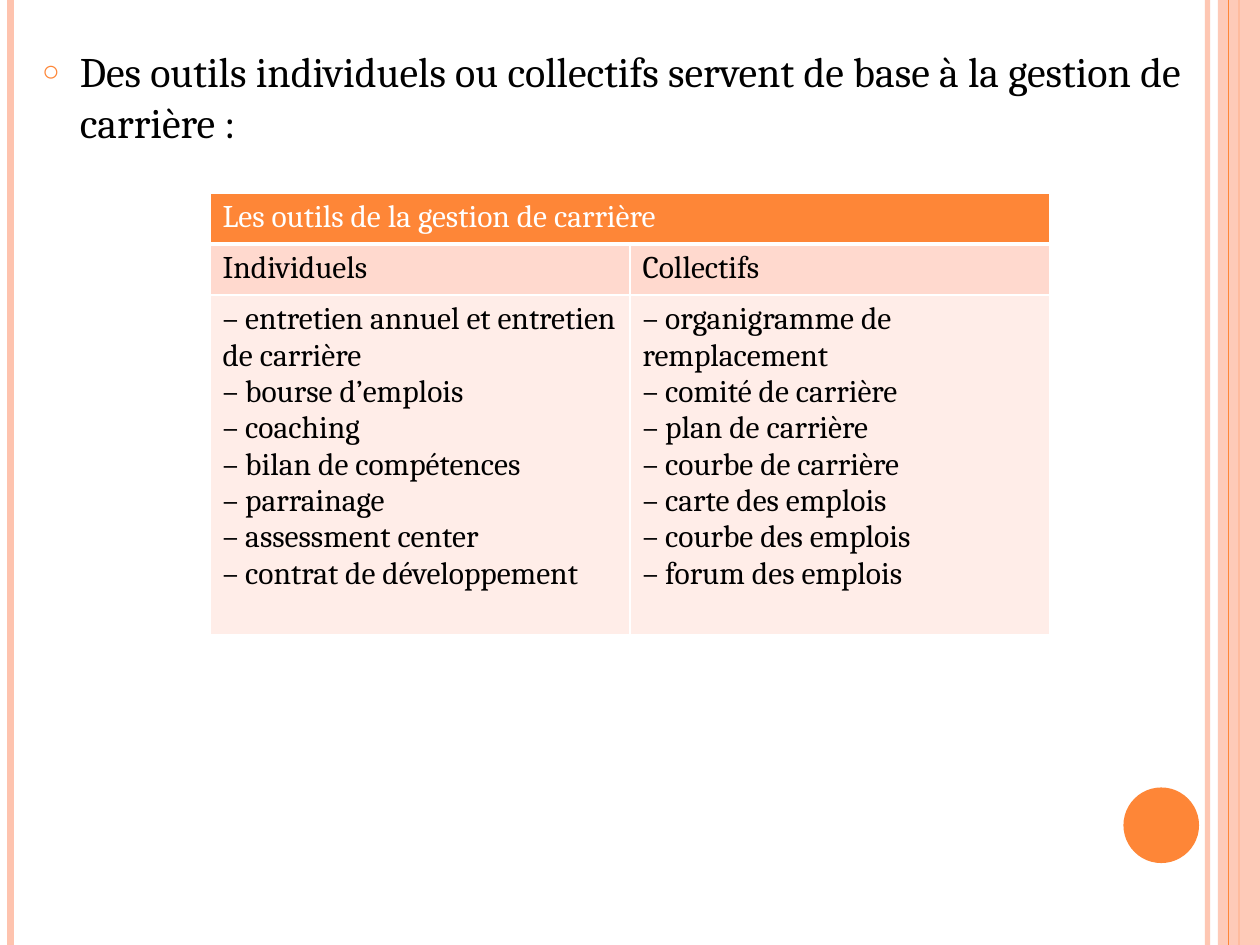
import pptx
import pptx.dml.color
import pptx.enum.shapes
import pptx.oxml
import pptx.oxml.ns
import pptx.util
from lxml import etree

Pt = pptx.util.Pt
NS = pptx.oxml.ns.nsdecls("a")
ORANGE, PEACH, WHITE, BLACK = "FE8637", "FEC3AE", "FFFFFF", "000000"
HIGH = 540
SOLO = [
    "entretien annuel et entretien de carrière", "bourse d’emplois", "coaching",
    "bilan de compétences", "parrainage", "assessment center",
    "contrat de développement",
]
GROUP = [
    "organigramme de remplacement", "comité de carrière", "plan de carrière",
    "courbe de carrière", "carte des emplois", "courbe des emplois",
    "forum des emplois",
]


def color(text):
    """Turn a hex string into a colour."""
    return pptx.dml.color.RGBColor.from_string(text)


def node(xml):
    """Parse a fragment in the drawing namespace."""
    return pptx.oxml.parse_xml(xml.replace(">", f" {NS}>", 1) if "/>" not in xml.split(">")[0] + ">"
                               else xml.replace("/>", f" {NS}/>", 1))


class Deck:
    """Hold the style and the current slide."""

    face = "Cambria"

    def __init__(self):
        """Open a deck with one titled-list slide."""
        self.prs = pptx.Presentation()
        self.prs.slide_width, self.prs.slide_height = Pt(720), Pt(HIGH)
        self.slide = self.prs.slides.add_slide(self.prs.slide_layouts[1])
        title = self.slide.shapes.title._element
        title.getparent().remove(title)

    def fade(self, part, alpha):
        """Make the solid colours in a part see-through."""
        for clr in part.iter(pptx.oxml.ns.qn("a:srgbClr")):
            clr.append(node(f'<a:alpha val="{alpha * 1000}"/>'))

    def font(self, para, size, tint):
        """Style a whole paragraph."""
        para.font.name, para.font.size = self.face, Pt(size)
        para.font.color.rgb = color(tint)

    def rule(self, x, width, tint, alpha=100):
        """Draw a line down the full slide."""
        kind = pptx.enum.shapes.MSO_CONNECTOR.STRAIGHT
        line = self.slide.shapes.add_connector(kind, Pt(x), 0, Pt(x), Pt(HIGH))
        line.line.width = Pt(width)
        line.line.color.rgb = color(tint)
        props = line._element.spPr
        props.append(node("<a:effectLst/>"))
        if alpha < 100:
            self.fade(props, alpha)

    def shape(self, kind, box, tint, alpha=100):
        """Draw a plain filled shape."""
        form = self.slide.shapes.add_shape(kind, *map(Pt, box))
        form.shadow.inherit = False
        form.fill.solid()
        form.fill.fore_color.rgb = color(tint)
        form.line.fill.background()
        if alpha < 100:
            self.fade(form._element.spPr, alpha)

    def body(self, box, text):
        """Fill the body placeholder with one bullet."""
        hold = self.slide.placeholders[1]
        hold.left, hold.top, hold.width, hold.height = map(Pt, box)
        tree = hold._element.getparent()
        tree.append(hold._element)
        para = hold.text_frame.paragraphs[0]
        para.text = text
        para.space_before = Pt(6)
        props = para._p.get_or_add_pPr()
        props.set("marL", str(Pt(21.6)))
        props.set("indent", str(Pt(-21.6)))
        props.append(node(f'<a:buClr><a:srgbClr val="{ORANGE}"/></a:buClr>'))
        props.append(node('<a:buSzPct val="70000"/>'))
        props.append(node('<a:buChar char="○"/>'))
        self.font(para, 24, BLACK)

    def cell(self, cell, lines, fill, tint, top=1, base=1):
        """Write, fill and border one cell."""
        cell.text = "\n".join(lines)
        for para in cell.text_frame.paragraphs:
            self.font(para, 18, tint)
        cell.fill.solid()
        cell.fill.fore_color.rgb = color(fill)
        props = cell._tc.get_or_add_tcPr()
        for spot, (side, width) in enumerate(zip("LRTB", (1, 1, top, base))):
            props.insert(spot, node(
                f'<a:ln{side} w="{Pt(width)}"><a:solidFill><a:srgbClr val="{WHITE}"/>'
                f'</a:solidFill></a:ln{side}>'))

    def table(self, box, highs, rows):
        """Add a table under one merged heading."""
        grid = self.slide.shapes.add_table(len(rows), 2, *map(Pt, box)).table
        for row, high in zip(grid.rows, highs):
            row.height = Pt(high)
        grid.cell(0, 0).merge(grid.cell(0, 1))
        for r, (fill, tint, top, base, texts) in enumerate(rows):
            for c, lines in enumerate(texts):
                self.cell(grid.cell(r, c), lines, fill, tint, top, base)


def main():
    """Build and save the slide."""
    deck = Deck()
    kinds = pptx.enum.shapes.MSO_SHAPE
    deck.rule(690, 3, PEACH, 93)
    deck.rule(6, 4.5, PEACH)
    deck.rule(708, 1.5, ORANGE)
    deck.shape(kinds.RECTANGLE, (696, 0, 24, HIGH), PEACH, 87)
    deck.rule(702, 0.75, ORANGE)
    deck.shape(kinds.OVAL, (642, 450, 43.2, 43.2), ORANGE)
    deck.body((16.8, 22.5, 669.6, 517.5),
              "Des outils individuels ou collectifs servent de base à la gestion de carrière :")
    lists = [[f"– {item}" for item in items] for items in (SOLO, GROUP)]
    highs = (29.2, 29.2, 194)
    deck.table((120, 110.2, 480, sum(highs)), highs, [
        (ORANGE, WHITE, 1, 3, [["Les outils de la gestion de carrière"], []]),
        ("FFD9CE", BLACK, 3, 1, [["Individuels"], ["Collectifs"]]),
        ("FFEDE8", BLACK, 1, 1, lists),
    ])
    deck.prs.save("out.pptx")


if __name__ == "__main__":
    main()
